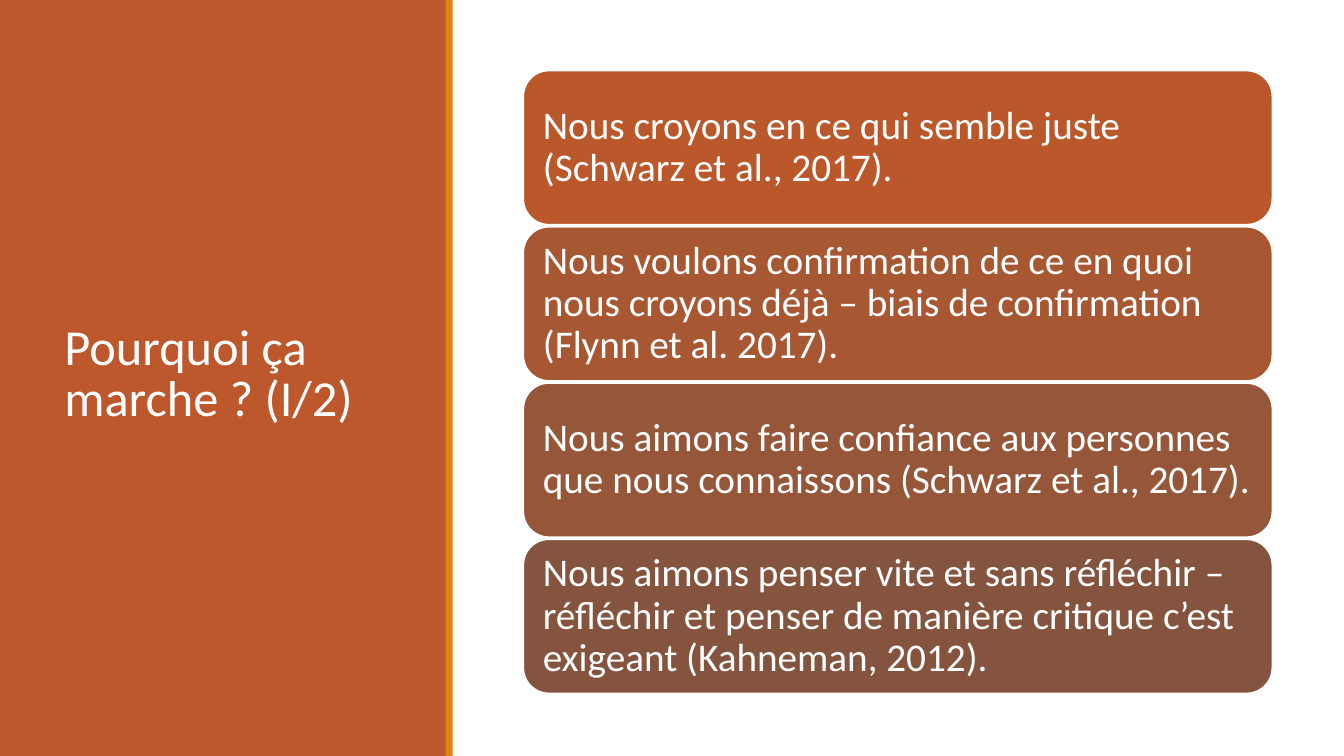
from pptx import Presentation
from pptx.dml.color import RGBColor
from pptx.enum.shapes import MSO_SHAPE as Shape
from pptx.enum.text import MSO_ANCHOR as Anchor, PP_ALIGN as Align
from pptx.util import Inches, Pt

COLORS = {"panel": "BD582C", "stripe": "E48312", "white": "FFFFFF"}
TITLE = "Pourquoi ça marche ? (I/2)"
REASONS = [
    ("BB582B", "Nous croyons en ce qui semble juste (Schwarz et al., 2017)."),
    ("A85733", "Nous voulons confirmation de ce en quoi nous croyons déjà – "
               "biais de confirmation (Flynn et al. 2017)."),
    ("965639", "Nous aimons faire confiance aux personnes que nous connaissons "
               "(Schwarz et al., 2017)."),
    ("84543F", "Nous aimons penser vite et sans réfléchir – réfléchir et penser "
               "de manière critique c’est exigeant (Kahneman, 2012)."),
]
CARD_TOP, CARD_PITCH = 0.7, 1.55


def add_block(slide, kind, box, fill):
    shape = slide.shapes.add_shape(kind, *map(Inches, box))
    shape.shadow.inherit = False
    shape.fill.solid()
    shape.fill.fore_color.rgb = RGBColor.from_string(fill)
    shape.line.fill.background()
    return shape


def write_text(shape, text, size, spacing, margins):
    """Fill a shape with left-aligned, vertically centred white text."""
    frame = shape.text_frame
    frame_format = {"word_wrap": True, "vertical_anchor": Anchor.MIDDLE}
    for side, margin in zip(("left", "top", "right", "bottom"), margins):
        frame_format[f"margin_{side}"] = Inches(margin)
    for name, value in frame_format.items():
        setattr(frame, name, value)
    paragraph = frame.paragraphs[0]
    paragraph.alignment = Align.LEFT
    paragraph.line_spacing = spacing
    run = paragraph.add_run()
    run.text = text
    for name, value in {"name": "Calibri", "size": Pt(size)}.items():
        setattr(run.font, name, value)
    run.font.color.rgb = RGBColor.from_string(COLORS["white"])


def add_title(slide):
    title = slide.shapes.add_textbox(*map(Inches, (0.54, 0.57, 3.37, 6.31)))
    write_text(title, TITLE, 36, 0.85, (0.1, 0.05, 0.1, 0.05))


def add_card(slide, top, fill, text):
    card = add_block(slide, Shape.ROUNDED_RECTANGLE, (5.19, top, 7.43, 1.53), fill)
    card.line.color.rgb = RGBColor.from_string(COLORS["white"])
    card.line.width = Pt(1.25)
    write_text(card, text, 28, 0.9, (0.12,) * 4)


def main():
    presentation = Presentation()
    presentation.slide_width = Inches(13.33)
    presentation.slide_height = Inches(7.5)
    slide = presentation.slides.add_slide(presentation.slide_layouts[6])
    add_block(slide, Shape.RECTANGLE, (0, 0, 4.43, 7.5), COLORS["panel"])
    add_title(slide)
    add_block(slide, Shape.RECTANGLE, (4.42, 0, 0.07, 7.5), COLORS["stripe"])
    for index, (fill, text) in enumerate(REASONS):
        add_card(slide, CARD_TOP + index * CARD_PITCH, fill, text)
    presentation.save("out.pptx")


if __name__ == "__main__":
    main()
